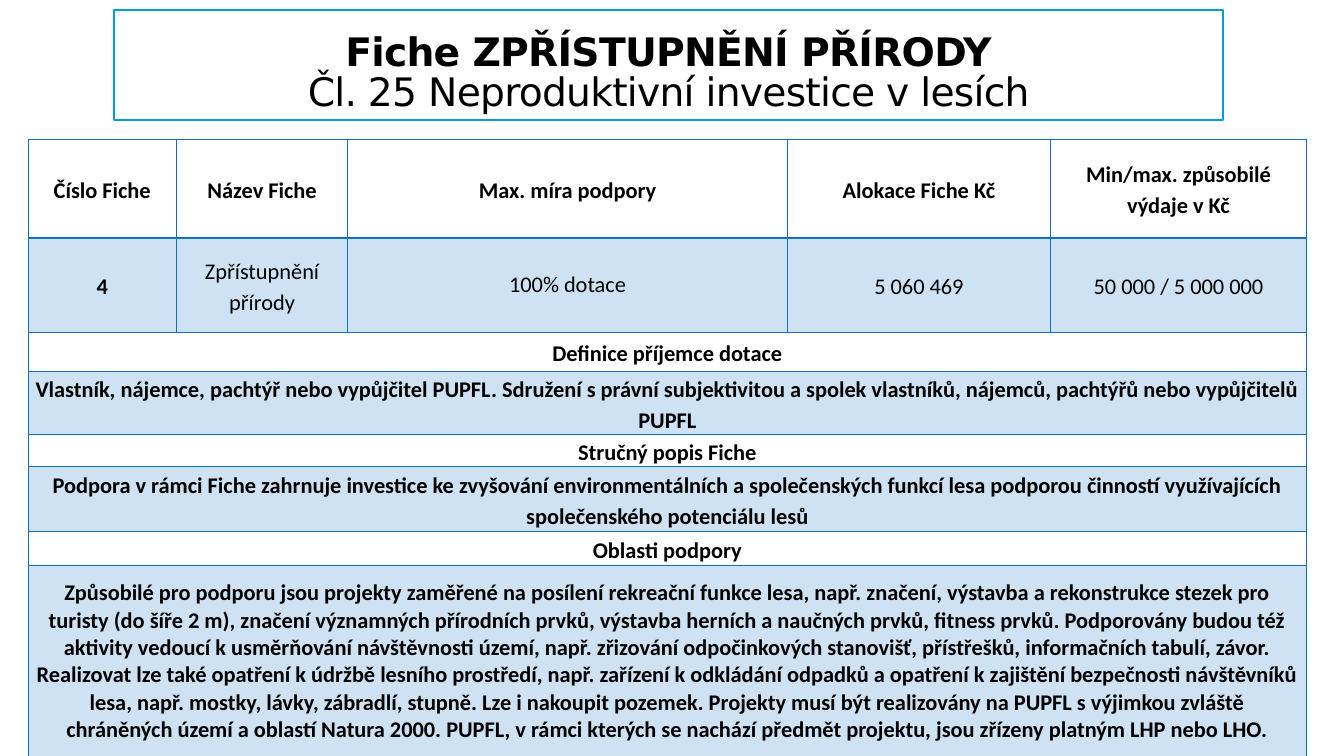
from lxml import etree
from pptx import Presentation
from pptx.dml.color import RGBColor
from pptx.enum.text import MSO_ANCHOR, PP_ALIGN
from pptx.oxml.ns import qn
from pptx.util import Inches, Pt

CENTER = PP_ALIGN.CENTER
MIDDLE, BOTTOM = MSO_ANCHOR.MIDDLE, MSO_ANCHOR.BOTTOM

COLORS = {"text": "000000", "paper": "FFFFFF", "frame": "009DD9", "grid": "0F6FC6"}
TINT = 20  # opacity of shaded rows, percent

TITLE = ("Fiche ZPŘÍSTUPNĚNÍ PŘÍRODY", "Čl. 25 Neproduktivní investice v lesích")
COLS = (1.47, 1.7, 4.36, 2.61, 2.54)
HEIGHTS = (0.98, 0.94, 0.39, 0.6, 0.29, 0.65, 0.33, 1.91)
ROWS = (
    ("Číslo Fiche", "Název Fiche", "Max. míra podpory", "Alokace Fiche Kč",
     "Min/max. způsobilé výdaje v Kč"),
    ("4", "Zpřístupnění přírody", "100% dotace", "5 060 469", "50 000 / 5 000 000"),
    ("Definice příjemce dotace",),
    ("Vlastník, nájemce, pachtýř nebo vypůjčitel PUPFL. Sdružení s právní subjektivitou "
     "a spolek vlastníků, nájemců, pachtýřů nebo vypůjčitelů PUPFL",),
    ("Stručný popis Fiche",),
    ("Podpora v rámci Fiche zahrnuje investice ke zvyšování environmentálních a "
     "společenských funkcí lesa podporou činností využívajících společenského "
     "potenciálu lesů",),
    ("Oblasti podpory",),
    ("Způsobilé pro podporu jsou projekty zaměřené na posílení rekreační funkce lesa, "
     "např. značení, výstavba a rekonstrukce stezek pro turisty (do šíře 2 m), značení "
     "významných přírodních prvků, výstavba herních a naučných prvků, fitness prvků. "
     "Podporovány budou též aktivity vedoucí k usměrňování návštěvnosti území, např. "
     "zřizování odpočinkových stanovišť, přístřešků, informačních tabulí, závor. "
     "Realizovat lze také opatření k údržbě lesního prostředí, např. zařízení k "
     "odkládání odpadků a opatření k zajištění bezpečnosti návštěvníků lesa, např. "
     "mostky, lávky, zábradlí, stupně. Lze i nakoupit pozemek. Projekty musí být "
     "realizovány na PUPFL s výjimkou zvláště chráněných území a oblastí Natura 2000. "
     "PUPFL, v rámci kterých se nachází předmět projektu, jsou zřízeny platným LHP "
     "nebo LHO.",),
)
SINGLE = {(1, 2), (7, 0)}  # cells with single line spacing


def color(name):
    return RGBColor.from_string(COLORS[name])


def style(run, face, size, bold):
    font = run.font
    font.name, font.size, font.bold = face, Pt(size), bold
    font.color.rgb = color("text")


def add_title(slide, left, top, width, height):
    title = slide.shapes.title
    title.left, title.top = Inches(left), Inches(top)
    title.width, title.height = Inches(width), Inches(height)
    title.fill.solid()
    title.fill.fore_color.rgb = color("paper")
    title.line.color.rgb = color("frame")
    title.line.width = Pt(1)
    frame = title.text_frame
    frame.text = "\v".join(TITLE)
    frame.word_wrap = True
    frame.vertical_anchor = BOTTOM
    para = frame.paragraphs[0]
    para.alignment, para.line_spacing = CENTER, 0.85
    for run, bold in zip(para.runs, (True, False)):
        style(run, "DejaVu Sans", 28, bold)
        run.font._element.set("spc", "-50")


def add_edges(cell, head, below):
    """Draw the cell borders, with a double-weight rule under the header."""
    props = cell._tc.get_or_add_tcPr()
    heavy = {"B": head, "T": below}
    for side in "LRTB":
        width = Pt(2 if heavy.get(side) else 1)
        line = etree.SubElement(props, qn(f"a:ln{side}"), w=str(width))
        fill = etree.SubElement(line, qn("a:solidFill"))
        etree.SubElement(fill, qn("a:srgbClr"), val=COLORS["grid"])


def shade(cell, tinted):
    if not tinted:
        cell.fill.background()
        return
    cell.fill.solid()
    cell.fill.fore_color.rgb = color("grid")
    tone = cell._tc.tcPr.find(qn("a:solidFill"))[0]
    etree.SubElement(tone, qn("a:alpha"), val=str(TINT * 1000))


def write(cell, text, bold, space):
    cell.vertical_anchor = MIDDLE
    cell.margin_left = cell.margin_right = Inches(0.07)
    cell.margin_top = cell.margin_bottom = 0
    cell.text = text
    para = cell.text_frame.paragraphs[0]
    para.alignment, para.line_spacing = CENTER, space
    style(para.runs[0], "Calibri", 16, bold)


def add_grid(slide, left, top, width, height):
    table = slide.shapes.add_table(
        len(ROWS), len(COLS), Inches(left), Inches(top), Inches(width), Inches(height)
    ).table
    table.first_row = table.horz_banding = False
    for col, size in zip(table.columns, COLS):
        col.width = Inches(size)
    for r, (texts, size) in enumerate(zip(ROWS, HEIGHTS)):
        table.rows[r].height = Inches(size)
        for c in range(len(COLS)):
            cell = table.cell(r, c)
            add_edges(cell, r == 0, r == 1)
            shade(cell, r % 2 == 1)
        if len(texts) == 1:
            table.cell(r, 0).merge(table.cell(r, len(COLS) - 1))
        for c, text in enumerate(texts):
            space = 1.0 if (r, c) in SINGLE else 1.15
            write(table.cell(r, c), text, r != 1 or c == 0, space)


def main():
    deck = Presentation()
    deck.slide_width, deck.slide_height = Inches(13.33), Inches(7.5)
    slide = deck.slides.add_slide(deck.slide_layouts[5])
    add_title(slide, 1.13, 0.1, 11, 1.09)
    add_grid(slide, 0.28, 1.38, sum(COLS), sum(HEIGHTS))
    deck.save("out.pptx")


if __name__ == "__main__":
    main()
